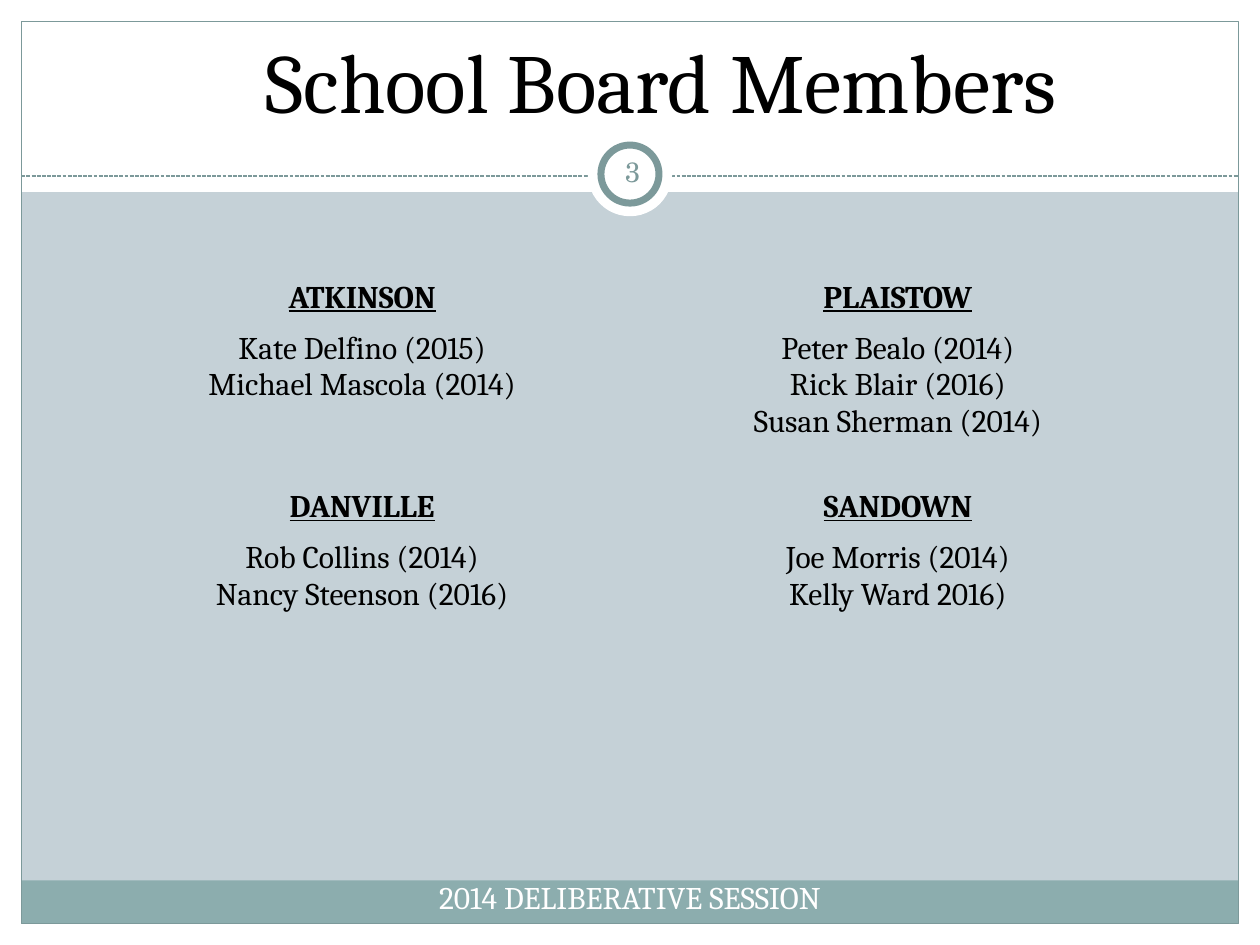
from dataclasses import dataclass

from lxml import etree
from pptx import Presentation
from pptx.dml.color import RGBColor
from pptx.enum.dml import MSO_LINE
from pptx.enum.shapes import MSO_CONNECTOR, MSO_SHAPE
from pptx.enum.text import MSO_ANCHOR, PP_ALIGN
from pptx.oxml.ns import qn
from pptx.util import Cm, Pt

RECTANGLE, OVAL = MSO_SHAPE.RECTANGLE, MSO_SHAPE.OVAL
STRAIGHT = MSO_CONNECTOR.STRAIGHT
CENTER = PP_ALIGN.CENTER
TOP, MIDDLE, BOTTOM = MSO_ANCHOR.TOP, MSO_ANCHOR.MIDDLE, MSO_ANCHOR.BOTTOM
PLAIN_TABLE_STYLE = "{2D5ABB26-0587-4C30-8999-92F81FD0307C}"


@dataclass(frozen=True)
class Theme:
    page = RGBColor(0xC5, 0xD1, 0xD7)
    white = RGBColor(0xFF, 0xFF, 0xFF)
    black = RGBColor(0, 0, 0)
    band = RGBColor(0x8C, 0xAD, 0xAE)
    line = RGBColor(0x7C, 0x99, 0x9A)
    font = "Cambria"
    number_font = "TeX Gyre Schola"
    title_size = Pt(48)
    body_size = Pt(18)
    number_size = Pt(16)


theme = Theme()
WIDTH, HEIGHT, MARGIN = 25.4, 19.05, 0.43
INNER_WIDTH = WIDTH - 2 * MARGIN

deck = Presentation()
deck.slide_width, deck.slide_height = Cm(WIDTH), Cm(HEIGHT)
page = deck.slides.add_slide(deck.slide_layouts[6])
page.background.fill.solid()
page.background.fill.fore_color.rgb = theme.page


def add_panel(kind, bounds, fill=None, line_width=None):
    panel = page.shapes.add_shape(kind, *map(Cm, bounds))
    panel.shadow.inherit = False
    if fill is None:
        panel.fill.background()
    else:
        panel.fill.solid()
        panel.fill.fore_color.rgb = fill
    if line_width is None:
        panel.line.fill.background()
    else:
        panel.line.color.rgb = theme.line
        panel.line.width = Pt(line_width)


def add_label(bounds, text, size, color, font, anchor):
    box = page.shapes.add_textbox(*map(Cm, bounds))
    frame = box.text_frame
    frame.word_wrap = True
    frame.vertical_anchor = anchor
    para = frame.paragraphs[0]
    para.text = text
    para.alignment = CENTER
    para.font.size, para.font.name = size, font
    para.font.color.rgb = color
    return box


# White margins and header, footer band, outer frame
for bounds in (
    (0, HEIGHT - MARGIN, WIDTH, MARGIN),
    (0, 0, WIDTH, 3.87),
    (0, 0, MARGIN, HEIGHT),
    (WIDTH - MARGIN, 0, MARGIN, HEIGHT),
):
    add_panel(RECTANGLE, bounds, theme.white)
add_panel(RECTANGLE, (MARGIN, 17.75, INNER_WIDTH, 0.87), theme.band)
add_panel(RECTANGLE, (MARGIN, MARGIN, INNER_WIDTH, HEIGHT - 2 * MARGIN), line_width=0.75)

# Dashed rule with the number badge on it
rule = page.shapes.add_connector(STRAIGHT, Cm(MARGIN), Cm(3.55), Cm(WIDTH - MARGIN), Cm(3.55))
rule.line.color.rgb = theme.line
rule.line.width = Pt(0.75)
rule.line.dash_style = MSO_LINE.SQUARE_DOT
etree.SubElement(rule._element.spPr, qn("a:effectLst"))
for diameter, line_width in ((1.7, None), (1.17, 4)):
    bounds = ((WIDTH - diameter) / 2, 3.51 - diameter / 2, diameter, diameter)
    add_panel(OVAL, bounds, theme.white, line_width)

title = add_label((0.85, 0.64, 23.7, 2.12), "School Board Members",
                  theme.title_size, theme.black, theme.font, BOTTOM)
title_properties = title.text_frame.paragraphs[0]._p.get_or_add_pPr()
title_properties.set("marL", str(Cm(1.27)))
title_properties.set("indent", "0")

# Members by town, two towns to a row
rows = [
    (["ATKINSON"], ["PLAISTOW"]),
    (["Kate Delfino (2015)", "Michael Mascola (2014)"],
     ["Peter Bealo (2014)", "Rick Blair (2016)", "Susan Sherman (2014)"]),
    (["DANVILLE"], ["SANDOWN"]),
    (["Rob Collins (2014)", "Nancy Steenson (2016)"],
     ["Joe Morris (2014)", "Kelly Ward 2016)"]),
    ([], []),
    ([], []),
    ([], []),
]
row_heights = [1.04, 3.18, 1.04, 1.85, 1.04, 1.04, 1.04]
table_shape = page.shapes.add_table(len(rows), 2, Cm(1.9), Cm(5.51), Cm(21.6), Cm(sum(row_heights)))
table = table_shape.table
table.first_row = table.horz_banding = False
table._tbl.tblPr.find(qn("a:tableStyleId")).text = PLAIN_TABLE_STYLE
for row_index, (towns, height) in enumerate(zip(rows, row_heights)):
    table.rows[row_index].height = Cm(height)
    is_heading = row_index in (0, 2)
    for column_index, names in enumerate(towns):
        cell = table.cell(row_index, column_index)
        cell.fill.background()
        cell.text = "\n".join(names)
        for para in cell.text_frame.paragraphs:
            para.alignment = CENTER
            para.font.size, para.font.name = theme.body_size, theme.font
            para.font.color.rgb = theme.black
            para.font.bold = para.font.underline = is_heading
for row_index in (5, 6):
    table.cell(row_index, 0).merge(table.cell(row_index, 1))

add_label((MARGIN, 17.58, INNER_WIDTH, 1.02), "2014 DELIBERATIVE SESSION",
          theme.body_size, theme.white, theme.font, TOP)
number = add_label((12.12, 2.84, 1.27, 1.22), "3",
                   theme.number_size, theme.line, theme.number_font, MIDDLE)
frame = number.text_frame
frame.margin_left = frame.margin_right = frame.margin_top = frame.margin_bottom = Cm(0.13)

deck.save("out.pptx")
